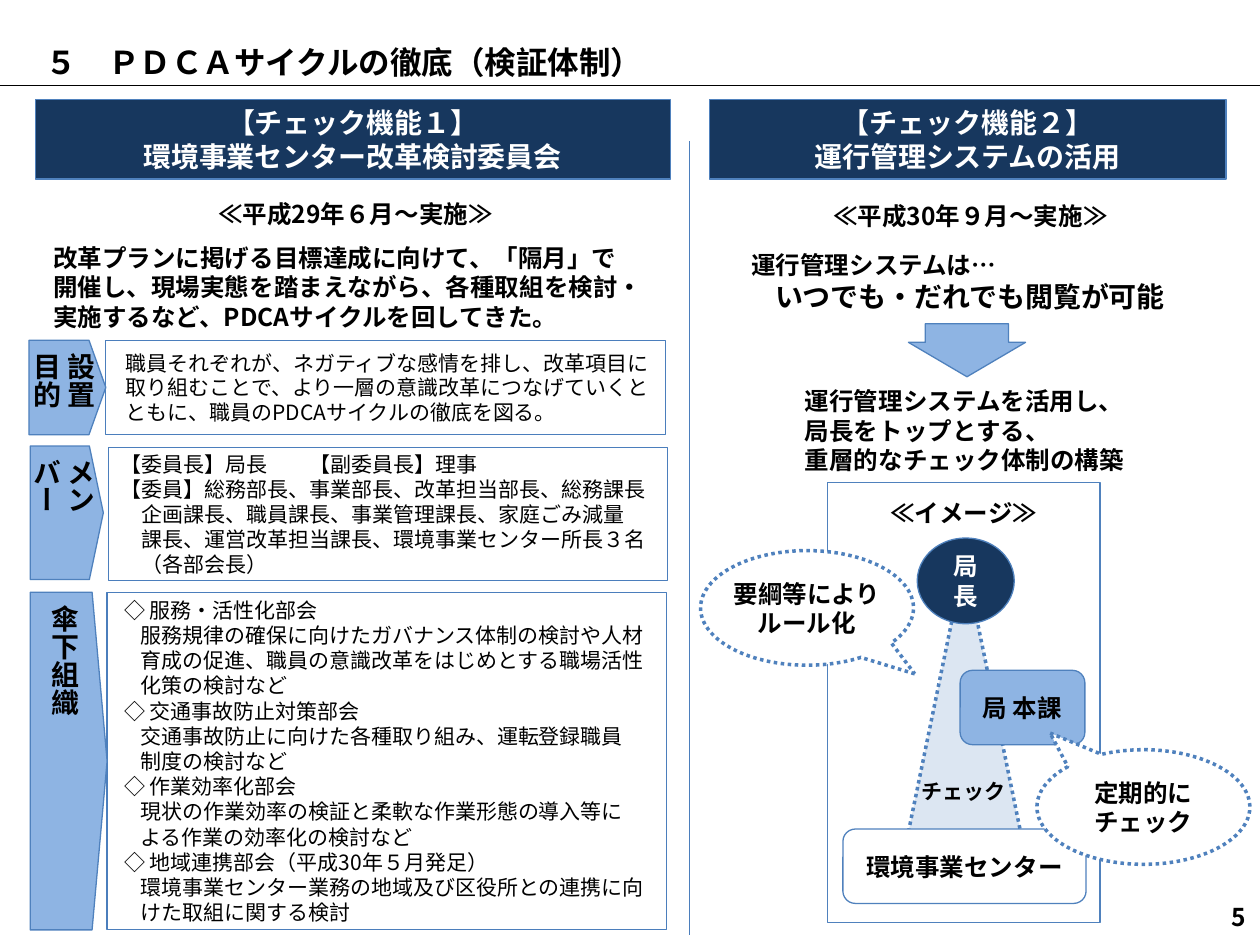
import pptx
import pptx.util
import pptx.dml.color
import pptx.enum.dml
import pptx.enum.shapes
import pptx.enum.text
import pptx.oxml.ns
from lxml import etree

Inches = pptx.util.Inches
Pt = pptx.util.Pt
RGB = pptx.dml.color.RGBColor.from_string
SHAPE = pptx.enum.shapes.MSO_SHAPE
ALIGN = pptx.enum.text.PP_ALIGN
ANCHOR = pptx.enum.text.MSO_ANCHOR
qn = pptx.oxml.ns.qn

FONT = "Noto Sans CJK JP"
COLORS = {
    "black": "000000", "white": "FFFFFF", "navy": "17375E", "blue": "8EB4E3",
    "pale": "DCE6F2", "edge": "4F81BD", "rule": "4B7EBC",
}

deck = pptx.Presentation()
deck.slide_width, deck.slide_height = Inches(10), Inches(7.5)
slide = deck.slides.add_slide(deck.slide_layouts[6])


def write(shape, lines, size=14, color="black", bold=True, align=ALIGN.CENTER,
          anchor=ANCHOR.MIDDLE, insets=(0.1, 0.05, 0.1, 0.05)):
    """Fill the shape with one paragraph per line and return the paragraphs."""
    frame = shape.text_frame
    frame.word_wrap = True
    frame.vertical_anchor = anchor
    (frame.margin_left, frame.margin_top,
     frame.margin_right, frame.margin_bottom) = map(Inches, insets)
    frame.text = "\n".join(lines)
    for paragraph in frame.paragraphs:
        paragraph.alignment = align
        paragraph.font.size = Pt(size)
        paragraph.font.bold = bold
        paragraph.font.color.rgb = RGB(COLORS[color])
        paragraph.font.name = FONT
        defaults = paragraph._p.pPr.find(qn("a:defRPr"))
        etree.SubElement(defaults, qn("a:ea"), typeface=FONT)
    return frame.paragraphs


def draw(kind, box, fill=None, line="edge", dotted=False, adjust=()):
    shape = slide.shapes.add_shape(kind, *map(Inches, box))
    shape.shadow.inherit = False
    if fill:
        shape.fill.solid()
        shape.fill.fore_color.rgb = RGB(COLORS[fill])
    else:
        shape.fill.background()
    if line:
        shape.line.color.rgb = RGB(COLORS[line])
        shape.line.width = Pt(2 if dotted else 0.75)
        if dotted:
            shape.line.dash_style = pptx.enum.dml.MSO_LINE.ROUND_DOT
    else:
        shape.line.fill.background()
    for index, value in enumerate(adjust):
        shape.adjustments[index] = value
    return shape


# Title rule and column divider
for start, end, color in [((0, 0.68), (10, 0.68), "black"),
                          ((5.47, 7.42), (5.47, 1.12), "rule")]:
    rule = slide.shapes.add_connector(
        pptx.enum.shapes.MSO_CONNECTOR.STRAIGHT, *map(Inches, start + end))
    rule.line.color.rgb = RGB(COLORS[color])
    rule.line.width = Pt(0.75)
    etree.SubElement(rule._element.spPr, qn("a:effectLst"))

# Column headings
for left, width, lines in [
    (0.28, 5.04, ["【チェック機能１】", "環境事業センター改革検討委員会"]),
    (5.63, 4.1, ["【チェック機能２】", "運行管理システムの活用"]),
]:
    heading = draw(SHAPE.FLOWCHART_PROCESS, (left, 0.79, width, 0.63), "navy")
    write(heading, lines, 16, "white")

# Free text
texts = {}
for part, box, size, align, lines in [
    ("title", (0.01, 0.3, 9.99, 0.38), 18, ALIGN.LEFT,
     ["　５　ＰＤＣＡサイクルの徹底（検証体制）"]),
    ("page", (9.48, 7.08, 0.51, 0.39), 14, ALIGN.RIGHT, ["5"]),
    ("committee", (0.28, 1.5, 5.04, 1.21), 14, ALIGN.LEFT,
     [" ≪平成29年６月～実施≫",
      " 改革プランに掲げる目標達成に向けて、「隔月」で",
      " 開催し、現場実態を踏まえながら、各種取組を検討・",
      " 実施するなど、PDCAサイクルを回してきた。"]),
    ("start", (5.63, 1.47, 4.1, 0.48), 14, ALIGN.CENTER,
     [" ≪平成30年９月～実施≫"]),
    ("access", (5.67, 1.85, 4.06, 0.77), 14, ALIGN.LEFT,
     ["　運行管理システムは…", "いつでも・だれでも閲覧が可能"]),
    ("structure", (6.29, 2.93, 2.76, 0.97), 14, ALIGN.LEFT,
     ["運行管理システムを活用し、", "局長をトップとする、",
      "重層的なチェック体制の構築"]),
]:
    textbox = slide.shapes.add_textbox(*map(Inches, box))
    texts[part] = write(textbox, lines, size, align=align)
texts["committee"][0].alignment = ALIGN.CENTER
texts["committee"][1].space_before = Pt(8)
texts["access"][1].alignment = ALIGN.CENTER
texts["access"][1].font.size = Pt(16)

# Committee rows: vertical label and its details
wide = (0.1, 0.08, 0.1, 0.08)
for label, tag, tip, left, top, height, insets, spacing, lines in [
    ("設置目的", (0.23, 2.7, 0.61, 0.75), 0.219, 0.84, 2.7, 0.75,
     (0.16, 0.04, 0.12, 0.04), Pt(14),
     ["職員それぞれが、ネガティブな感情を排し、改革項目に取り組むことで、"
      "より一層の意識改革につなげていくとともに、職員のPDCAサイクルの徹底を図る。"]),
    ("メンバー", (0.24, 3.54, 0.58, 1.06), 0.191, 0.86, 3.55, 1.06, wide, None,
     ["【委員長】局長　　【副委員長】理事",
      "【委員】総務部長、事業部長、改革担当部長、総務課長",
      "　企画課長、職員課長、事業管理課長、家庭ごみ減量",
      "　課長、運営改革担当課長、環境事業センター所長３名",
      "　（各部会長）"]),
    ("傘下組織", (0.24, 4.7, 0.61, 2.68), 0.195, 0.85, 4.7, 2.68, wide, None,
     [" ◇ 服務・活性化部会",
      "　服務規律の確保に向けたガバナンス体制の検討や人材",
      "　育成の促進、職員の意識改革をはじめとする職場活性",
      "　化策の検討など",
      " ◇ 交通事故防止対策部会",
      "　交通事故防止に向けた各種取り組み、運転登録職員",
      "　制度の検討など",
      " ◇ 作業効率化部会",
      "　現状の作業効率の検証と柔軟な作業形態の導入等に",
      "　よる作業の効率化の検討など",
      " ◇ 地域連携部会（平成30年５月発足）",
      "　環境事業センター業務の地域及び区役所との連携に向",
      "　けた取組に関する検討"]),
]:
    details = draw(SHAPE.RECTANGLE, (left, top, 4.44, height), "white", "rule")
    for paragraph in write(details, lines, 12, bold=False, align=ALIGN.LEFT,
                           insets=insets):
        paragraph.line_spacing = spacing
    pentagon = draw(SHAPE.PENTAGON, tag, "blue", adjust=[tip])
    write(pentagon, [label], 16)
    pentagon.text_frame._txBody.bodyPr.set("vert", "eaVert")

# Checking structure
draw(SHAPE.DOWN_ARROW, (7.21, 2.57, 0.93, 0.42), "blue", adjust=[0.711, 0.65])
draw(SHAPE.ISOSCELES_TRIANGLE, (7.12, 4.44, 1.07, 2.6), "pale", dotted=True)
for kind, box, fill, line, label, size, color in [
    (SHAPE.OVAL, (7.28, 4.27, 0.77, 0.68), "navy", "edge", "局長", 14, "white"),
    (SHAPE.FLOWCHART_ALTERNATE_PROCESS, (7.62, 5.32, 0.99, 0.59),
     "blue", "edge", "局 本課", 14, "black"),
    (SHAPE.FLOWCHART_ALTERNATE_PROCESS, (6.69, 6.58, 1.93, 0.59),
     "white", "edge", "環境事業センター", 14, "black"),
    (SHAPE.ROUNDED_RECTANGLE, (6.98, 6.05, 1.34, 0.46),
     None, None, "チェック", 12, "black"),
]:
    write(draw(kind, box, fill, line), [label], size, color)
image_frame = draw(SHAPE.RECTANGLE, (6.57, 3.83, 2.16, 3.49))
write(image_frame, ["≪イメージ≫"], anchor=ANCHOR.TOP,
      insets=(0.04, 0.12, 0.04, 0.05))

for left, top, pointer, lines in [
    (5.56, 4.37, (0.506, 0.575), ["要綱等によりルール化"]),
    (8.23, 5.95, (-0.438, -0.645), ["定期的に", "チェック"]),
]:
    callout = draw(SHAPE.OVAL_CALLOUT, (left, top, 1.69, 0.91), "white",
                   dotted=True, adjust=pointer)
    write(callout, lines, insets=(0, 0.05, 0, 0.05))

deck.save("out.pptx")
